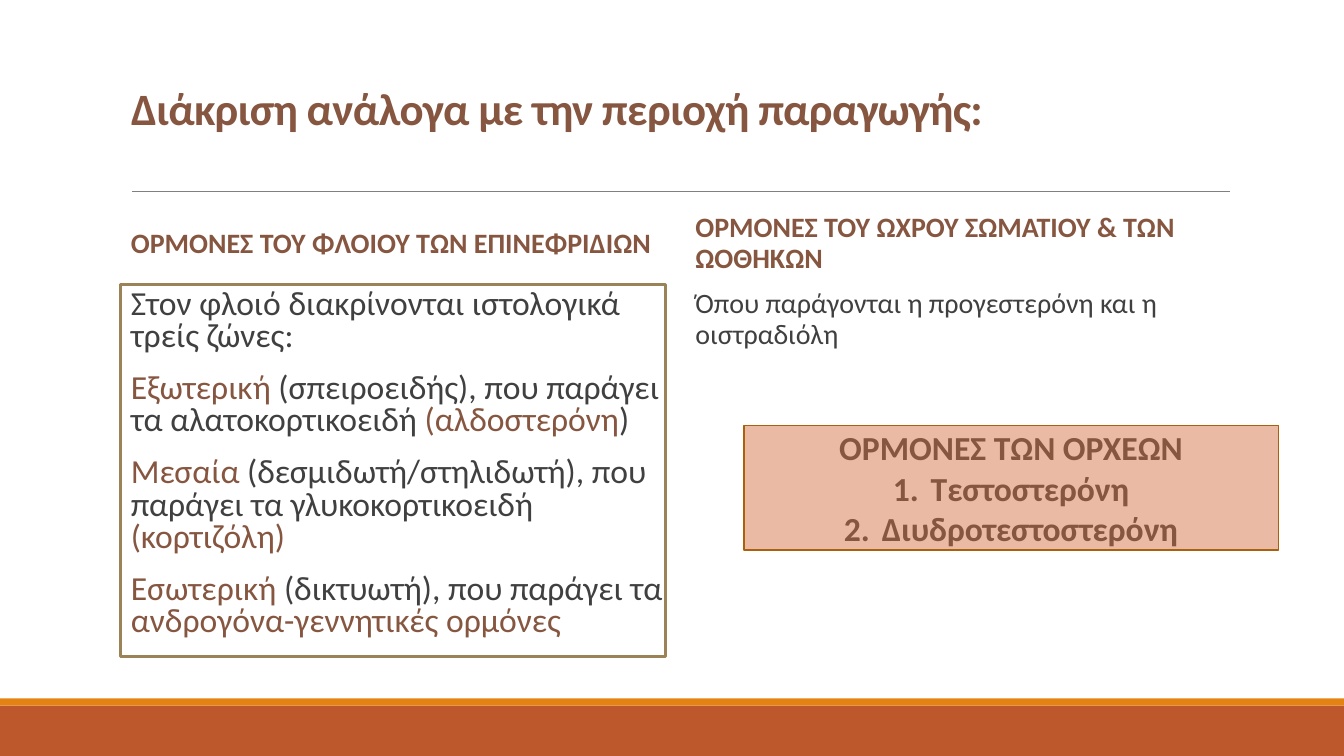
import pptx
import pptx.dml.color
import pptx.enum.shapes
import pptx.enum.text
import pptx.oxml.ns
import pptx.util
from lxml import etree

Pt = pptx.util.Pt
RGBColor = pptx.dml.color.RGBColor
Anchor = pptx.enum.text.MSO_ANCHOR
Align = pptx.enum.text.PP_ALIGN
qn = pptx.oxml.ns.qn

BROWN = RGBColor(0x86, 0x56, 0x40)
DARK = RGBColor(0x40, 0x40, 0x40)
GRAY = RGBColor(0x80, 0x80, 0x80)
RUST = RGBColor(0xBD, 0x58, 0x2C)
ORANGE = RGBColor(0xE4, 0x83, 0x12)
OLIVE = RGBColor(0x9B, 0x83, 0x57)
PEACH = RGBColor(0xEA, 0xBA, 0xA5)
AMBER = RGBColor(0xA9, 0x61, 0x0D)

LEFT, RIGHT = 86.4, 489.6
COLUMN = 388.8
HEAD_TOP, BODY_TOP = 145.2, 203.4


class SlideBuilder:
    font = "Calibri"

    def __init__(self, prs):
        self.slide = prs.slides.add_slide(prs.slide_layouts[5])

    def run(self, p, text, size, color, bold=False):
        r = p.add_run()
        r.text = text
        r.font.name = self.font
        r.font.size = Pt(size)
        r.font.bold = bold
        r.font.color.rgb = color
        return r

    def frame(self, sp, anchor, right=7.2):
        tf = sp.text_frame
        tf.word_wrap = True
        tf.auto_size = pptx.enum.text.MSO_AUTO_SIZE.NONE
        tf.vertical_anchor = anchor
        tf.margin_left, tf.margin_right = Pt(7.2), Pt(right)
        tf.margin_top = tf.margin_bottom = Pt(3.6)
        return tf

    def number(self, p, indent):
        pPr = p._p.get_or_add_pPr()
        pPr.set("marL", str(Pt(indent)))
        pPr.set("indent", str(-Pt(indent)))
        etree.SubElement(pPr, qn("a:buAutoNum"), type="arabicPeriod")

    def title(self, text, x, y, w, h):
        sp = self.slide.shapes.title
        sp.left, sp.top, sp.width, sp.height = Pt(x), Pt(y), Pt(w), Pt(h)
        p = self.frame(sp, Anchor.BOTTOM).paragraphs[0]
        p.alignment = Align.LEFT
        p.line_spacing = 0.85
        r = self.run(p, text, 32, BROWN, True)
        r.font._element.set("spc", "-50")

    def rect(self, x, y, w, h, fill, line=None, weight=1):
        sp = self.slide.shapes.add_shape(
            pptx.enum.shapes.MSO_SHAPE.RECTANGLE, Pt(x), Pt(y), Pt(w), Pt(h))
        sp.shadow.inherit = False
        sp.fill.solid()
        sp.fill.fore_color.rgb = fill
        if line is None:
            sp.line.fill.background()
        else:
            sp.line.color.rgb = line
            sp.line.width = Pt(weight)
        return sp

    def rule(self, x1, x2, y, color, weight):
        cn = self.slide.shapes.add_connector(
            pptx.enum.shapes.MSO_CONNECTOR.STRAIGHT, Pt(x1), Pt(y), Pt(x2), Pt(y))
        cn.line.color.rgb = color
        cn.line.width = Pt(weight)
        etree.SubElement(cn._element.spPr, qn("a:effectLst"))

    def heading(self, text, x):
        sp = self.slide.shapes.add_textbox(Pt(x), Pt(HEAD_TOP), Pt(COLUMN), Pt(58.2))
        p = self.frame(sp, Anchor.MIDDLE).paragraphs[0]
        p.line_spacing = 0.9
        self.run(p, text, 20, BROWN, True)

    def body(self, paragraphs, x, h, size, spacing, border=None):
        sp = self.slide.shapes.add_textbox(Pt(x), Pt(BODY_TOP), Pt(COLUMN), Pt(h))
        if border is not None:
            sp.line.color.rgb = border
            sp.line.width = Pt(2.25)
        tf = self.frame(sp, Anchor.TOP, 0)
        for i, runs in enumerate(paragraphs):
            p = tf.add_paragraph() if i else tf.paragraphs[0]
            p.line_spacing = spacing
            p.space_before, p.space_after = Pt(12), Pt(2)
            for text, color in runs:
                self.run(p, text, size, color)

    def callout(self, head, items, x, y, w, h):
        tf = self.frame(self.rect(x, y, w, h, PEACH, AMBER, 1.25), Anchor.MIDDLE)
        for i, text in enumerate([head, *items]):
            p = tf.add_paragraph() if i else tf.paragraphs[0]
            p.alignment = Align.CENTER
            if i:
                self.number(p, 27)
            self.run(p, text, 24, BROWN, True)


def main():
    prs = pptx.Presentation()
    prs.slide_width, prs.slide_height = Pt(960), Pt(540)
    s = SlideBuilder(prs)
    s.rect(0, 504, 960, 36, RUST)
    s.rect(0, 498.8, 960, 5.2, ORANGE)
    s.rule(94.2, 878.8, 136.5, GRAY, 0.5)
    s.title("Διάκριση ανάλογα με την περιοχή παραγωγής:", LEFT, 22.6, 792, 77.5)
    s.heading("ΟΡΜΟΝΕΣ ΤΟΥ ΦΛΟΙΟΥ ΤΩΝ ΕΠΙΝΕΦΡΙΔΙΩΝ", LEFT)
    s.body([
        [("Στον φλοιό διακρίνονται ιστολογικά τρείς ζώνες:", DARK)],
        [("Εξωτερική", BROWN),
         (" (σπειρoειδής), που παράγει τα αλατοκορτικοειδή ", DARK),
         ("(αλδοστερόνη", BROWN), (")", DARK)],
        [("Μεσαία", BROWN),
         (" (δεσμιδωτή/στηλιδωτή), που παράγει τα γλυκοκορτικοειδή ", DARK),
         ("(κορτιζόλη)", BROWN)],
        [("Εσωτερική", BROWN), (" (δικτυωτή), που παράγει τα ", DARK),
         ("ανδρογόνα-γεννητικές ορμόνες", BROWN)],
    ], LEFT, 265.8, 24, 0.8, OLIVE)
    s.heading("ΟΡΜΟΝΕΣ ΤΟΥ ΩΧΡΟΥ ΣΩΜΑΤΙΟΥ & ΤΩΝ ΩΟΘΗΚΩΝ", RIGHT)
    s.body([[("Όπου παράγονται η προγεστερόνη και η οιστραδιόλη", DARK)]],
           RIGHT, 80.6, 20, 0.9)
    s.callout("ΟΡΜΟΝΕΣ ΤΩΝ ΟΡΧΕΩΝ", ["Τεστοστερόνη", "Διυδροτεστοστερόνη"],
              531.2, 304, 382, 89)
    prs.save("out.pptx")


if __name__ == "__main__":
    main()
